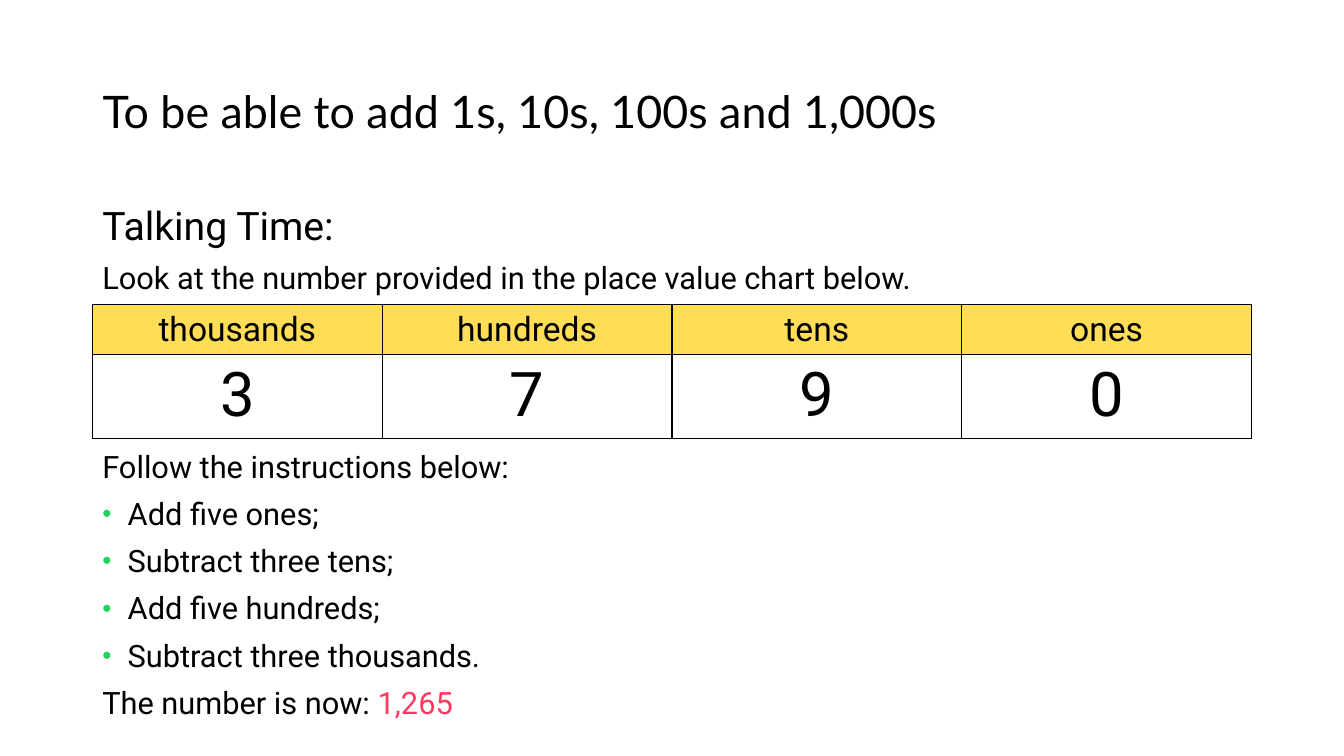
from lxml import etree
from pptx import Presentation
from pptx.dml.color import RGBColor
from pptx.enum.text import MSO_ANCHOR, PP_ALIGN
from pptx.oxml.ns import qn
from pptx.util import Cm, Pt

LEFT, CENTER = PP_ALIGN.LEFT, PP_ALIGN.CENTER
TOP, MIDDLE = MSO_ANCHOR.TOP, MSO_ANCHOR.MIDDLE
TITLE_ONLY = 5
BLACK, WHITE, YELLOW, GREEN, RED = "000000", "FFFFFF", "FFDD57", "23D160", "FF3860"
MARGIN, CONTENT_WIDTH = 2.33, 29.21


def rgb(value):
    return RGBColor.from_string(value)


def add_text(p, text, size=22, font="Roboto", color=BLACK):
    r = p.add_run()
    r.text = text
    r.font.size = Pt(size)
    r.font.name = font
    r.font.color.rgb = rgb(color)


def add_bullet(p):
    pPr = p._p.get_or_add_pPr()
    pPr.set("marL", str(Cm(0.64)))
    pPr.set("indent", str(-Cm(0.64)))
    color = etree.SubElement(pPr, qn("a:buClr"))
    etree.SubElement(color, qn("a:srgbClr"), val=GREEN)
    etree.SubElement(pPr, qn("a:buSzPct"), val="85000")
    etree.SubElement(pPr, qn("a:buFont"), typeface="Arial")
    etree.SubElement(pPr, qn("a:buChar"), char="•")


def add_borders(cell):
    tcPr = cell._tc.get_or_add_tcPr()
    for side in ("lnL", "lnR", "lnT", "lnB"):
        line = etree.SubElement(tcPr, qn(f"a:{side}"), w=str(Pt(1)))
        fill = etree.SubElement(line, qn("a:solidFill"))
        etree.SubElement(fill, qn("a:srgbClr"), val=BLACK)


class Lesson:
    def __init__(self, prs):
        self.s = prs.slides.add_slide(prs.slide_layouts[TITLE_ONLY])
        self.s.background.fill.solid()
        self.s.background.fill.fore_color.rgb = rgb(WHITE)

    def title(self, text, x, y, w, h):
        sp = self.s.shapes.title
        sp.left, sp.top, sp.width, sp.height = Cm(x), Cm(y), Cm(w), Cm(h)
        tf = sp.text_frame
        tf.word_wrap = True
        tf.vertical_anchor = MIDDLE
        p = tf.paragraphs[0]
        p.alignment = LEFT
        p.line_spacing = 0.9
        add_text(p, text, size=32, font="Lato")

    def body(self, lines, x, y, w, h):
        tf = self.s.shapes.add_textbox(Cm(x), Cm(y), Cm(w), Cm(h)).text_frame
        tf.word_wrap = True
        tf.vertical_anchor = TOP
        for i, (runs, space, bullet) in enumerate(lines):
            p = tf.add_paragraph() if i else tf.paragraphs[0]
            p.line_spacing = 0.9
            p.space_before = Pt(space)
            if bullet:
                add_bullet(p)
            for text, style in runs:
                add_text(p, text, **style)

    def table(self, rows, x, y, w):
        heights = [height for _, height, _, _, _ in rows]
        columns = len(rows[0][0])
        table = self.s.shapes.add_table(
            len(rows), columns, Cm(x), Cm(y), Cm(w), Cm(sum(heights))).table
        for i, (texts, height, size, fill, anchor) in enumerate(rows):
            table.rows[i].height = Cm(height)
            for j, text in enumerate(texts):
                cell = table.cell(i, j)
                add_borders(cell)
                cell.fill.solid()
                cell.fill.fore_color.rgb = rgb(fill)
                cell.vertical_anchor = anchor
                p = cell.text_frame.paragraphs[0]
                p.alignment = CENTER
                add_text(p, text, size=size)


def main():
    prs = Presentation()
    prs.slide_width, prs.slide_height = Cm(33.87), Cm(19.05)
    lesson = Lesson(prs)
    lesson.title("To be able to add 1s, 10s, 100s and 1,000s", MARGIN, 1.02, 24.38, 3.68)

    steps = ["Add five ones;", "Subtract three tens;",
             "Add five hundreds;", "Subtract three thousands."]
    lesson.body([
        ([("Talking Time:", {"size": 28})], 0, False),
        ([("Look at the number provided in the place value chart below.", {})], 10, False),
        ([("Follow the instructions below:", {})], 111, False),
        *[([(step, {})], 10, True) for step in steps],
        ([("The number is now: ", {}), ("1,265", {"color": RED})], 10, False),
    ], MARGIN, 5.08, CONTENT_WIDTH, 12.09)

    lesson.table([
        (["thousands", "hundreds", "tens", "ones"], 1.24, 24, YELLOW, MIDDLE),
        (["3", "7", "9", "0"], 2.08, 44, WHITE, TOP),
    ], MARGIN, 7.67, CONTENT_WIDTH)
    prs.save("out.pptx")


if __name__ == "__main__":
    main()
